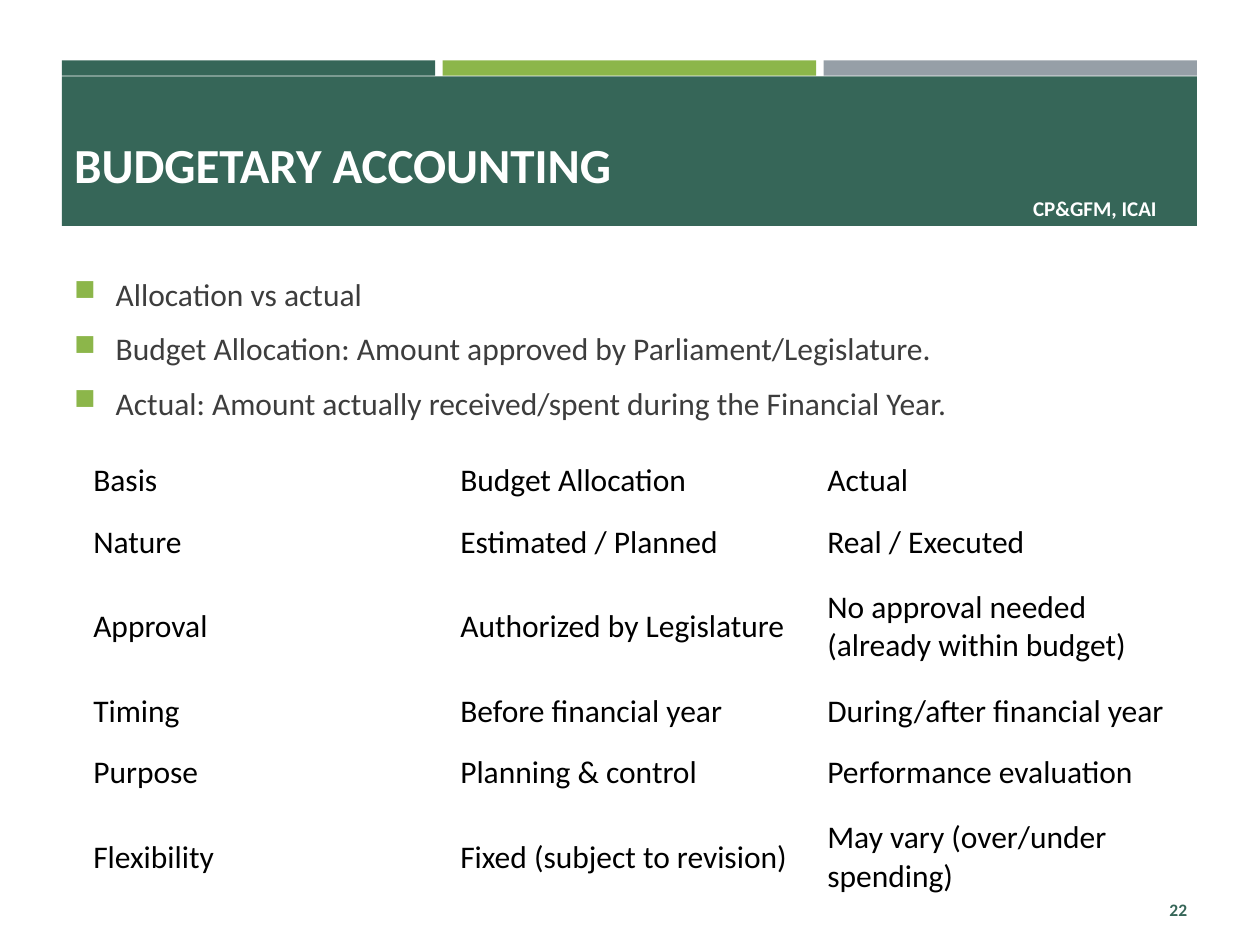
"""Build the budgetary accounting slide: banner, bullets and comparison table."""
from lxml.etree import SubElement
from pptx import Presentation
from pptx.dml.color import RGBColor
from pptx.enum.shapes import MSO_SHAPE
from pptx.enum.text import MSO_ANCHOR, PP_ALIGN
from pptx.oxml.ns import qn
from pptx.util import Inches, Pt

COLORS = {"green": "366658", "lime": "8CB64A", "gray": "969FA7",
          "white": "FFFFFF", "body": "3D3D3D", "black": "000000"}
WIDTH, HEIGHT = Inches(10), Inches(7.5)
LEFT, SPAN, GAP = 0.049, 0.901, 0.006

presentation = Presentation()
presentation.slide_width, presentation.slide_height = WIDTH, HEIGHT
slide = presentation.slides.add_slide(presentation.slide_layouts[6])


def area(left, top, width, height):
    """Turn shares of the slide into lengths."""
    return (round(left * WIDTH), round(top * HEIGHT),
            round(width * WIDTH), round(height * HEIGHT))


def write(frame, *lines, size=18, color="black", bold=False, align=PP_ALIGN.LEFT,
          anchor=MSO_ANCHOR.MIDDLE, bullet=None):
    """Fill a text frame with one paragraph per line."""
    frame.word_wrap = True
    frame.vertical_anchor = anchor
    for index, line in enumerate(lines):
        paragraph = frame.paragraphs[0] if index == 0 else frame.add_paragraph()
        paragraph.alignment = align
        if bullet:
            properties = paragraph._p.get_or_add_pPr()
            properties.set("marL", str(Inches(0.33)))
            properties.set("indent", str(-Inches(0.33)))
            bullet_color = SubElement(properties, qn("a:buClr"))
            SubElement(bullet_color, qn("a:srgbClr"), val=COLORS["lime"])
            SubElement(properties, qn("a:buSzPct"), val="92000")
            SubElement(properties, qn("a:buChar"), char=bullet)
            paragraph.space_before = Pt(3.6 if index else 0)
            paragraph.space_after = Pt(6)
        run = paragraph.add_run()
        run.text = line
        run.font.name, run.font.size, run.font.bold = "Calibri", Pt(size), bold
        run.font.color.rgb = RGBColor.from_string(COLORS[color])


strip = (SPAN - 2 * GAP) / 3
blocks = [(color, (LEFT + column * (strip + GAP), 0.064, strip, 0.016))
          for column, color in enumerate(["green", "lime", "gray"])]
blocks += [("green", (LEFT, 0.081, SPAN, 0.158)),
           ("green", (0.799, 0.208, 0.14, 0.024))]
for color, place in blocks:
    shape = slide.shapes.add_shape(MSO_SHAPE.RECTANGLE, *area(*place))
    shape.shadow.inherit = False
    shape.fill.solid()
    shape.fill.fore_color.rgb = RGBColor.from_string(COLORS[color])
    shape.line.fill.background()
write(shape.text_frame, "CP&GFM, ICAI", size=12, color="white", bold=True,
      align=PP_ALIGN.CENTER)

title = slide.shapes.add_textbox(*area(LEFT, 0.1, 0.779, 0.147))
write(title.text_frame, "BUDGETARY ACCOUNTING", size=28, color="white", bold=True)

body = slide.shapes.add_textbox(*area(LEFT, 0.284, SPAN, 0.643))
write(body.text_frame,
      "Allocation vs actual",
      "Budget Allocation: Amount approved by Parliament/Legislature.",
      "Actual: Amount actually received/spent during the Financial Year.",
      color="body", align=PP_ALIGN.JUSTIFY, anchor=MSO_ANCHOR.TOP, bullet="■")

number = slide.shapes.add_textbox(*area(0.868, 0.936, 0.084, 0.053))
write(number.text_frame, "22", size=10, color="green", bold=True, align=PP_ALIGN.RIGHT)

rows = [
    ("Basis", "Budget Allocation", "Actual"),
    ("Nature", "Estimated / Planned", "Real / Executed"),
    ("Approval", "Authorized by Legislature", "No approval needed (already within budget)"),
    ("Timing", "Before financial year", "During/after financial year"),
    ("Purpose", "Planning & control", "Performance evaluation"),
    ("Flexibility", "Fixed (subject to revision)", "May vary (over/under spending)"),
]
heights = [0.49, 0.49, 0.85] * 2
frame = slide.shapes.add_table(len(rows), 3, *area(0.064, 0.476, 0.874, 0.487))
table = frame.table
table.first_row = table.horz_banding = False
style = table._tbl.tblPr.find(qn("a:tableStyleId"))
style.text = "{2D5ABB26-0587-4C30-8999-92F81FD0307C}"
for row, height, texts in zip(table.rows, heights, rows):
    row.height = Inches(height)
    for cell, text in zip(row.cells, texts):
        cell.fill.background()
        cell.vertical_anchor = MSO_ANCHOR.MIDDLE
        write(cell.text_frame, text, anchor=None)

presentation.save("out.pptx")
